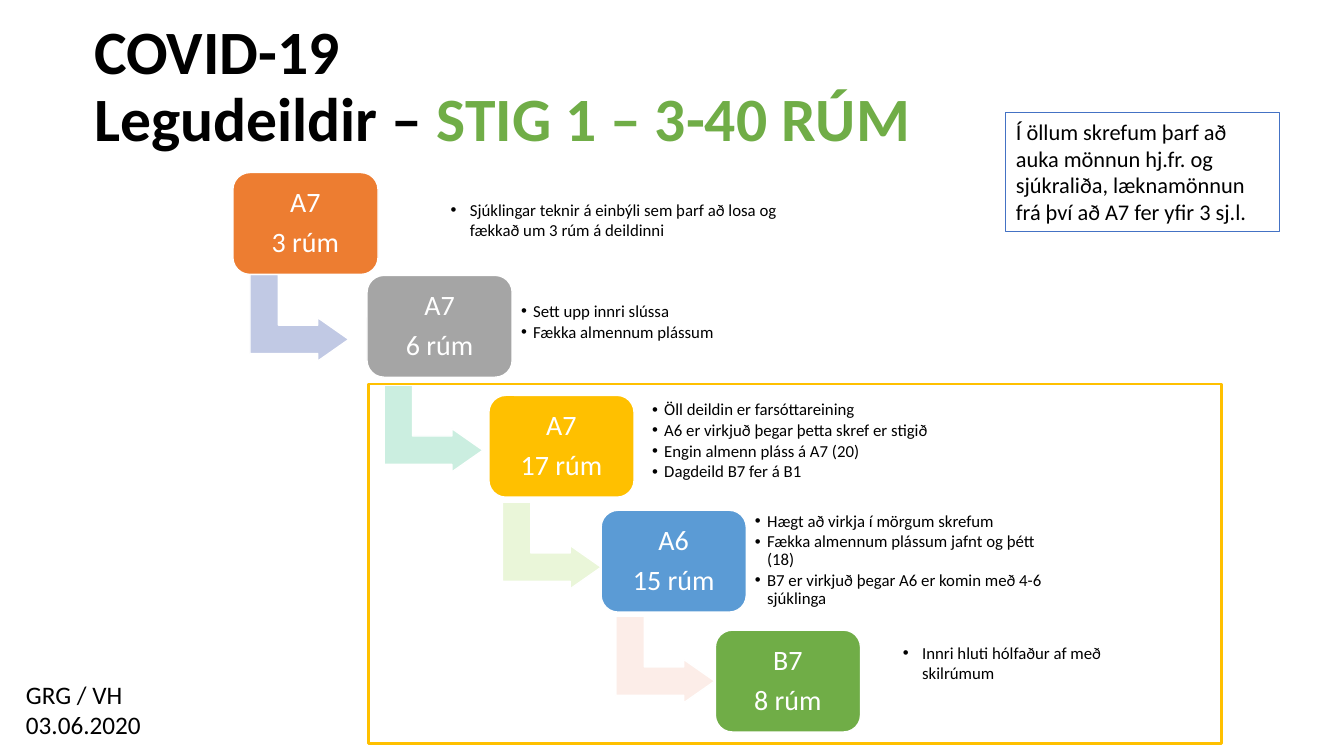
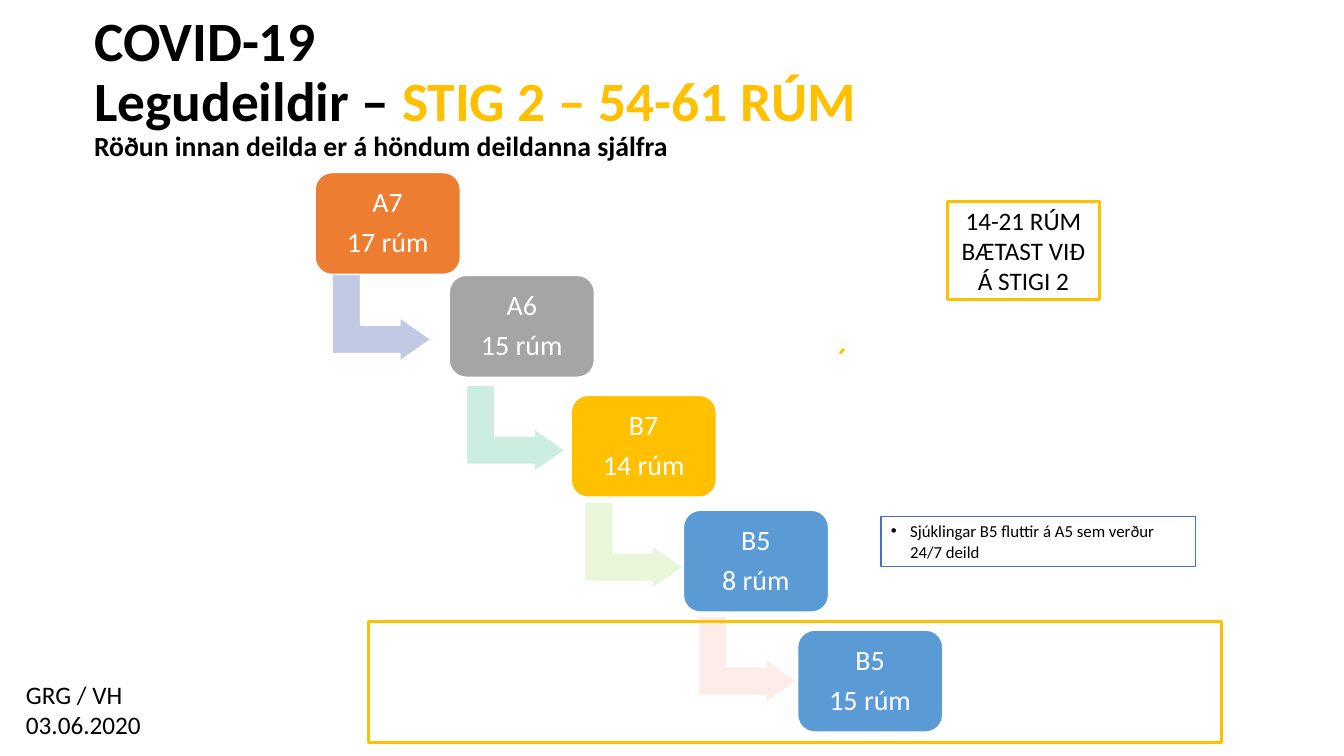
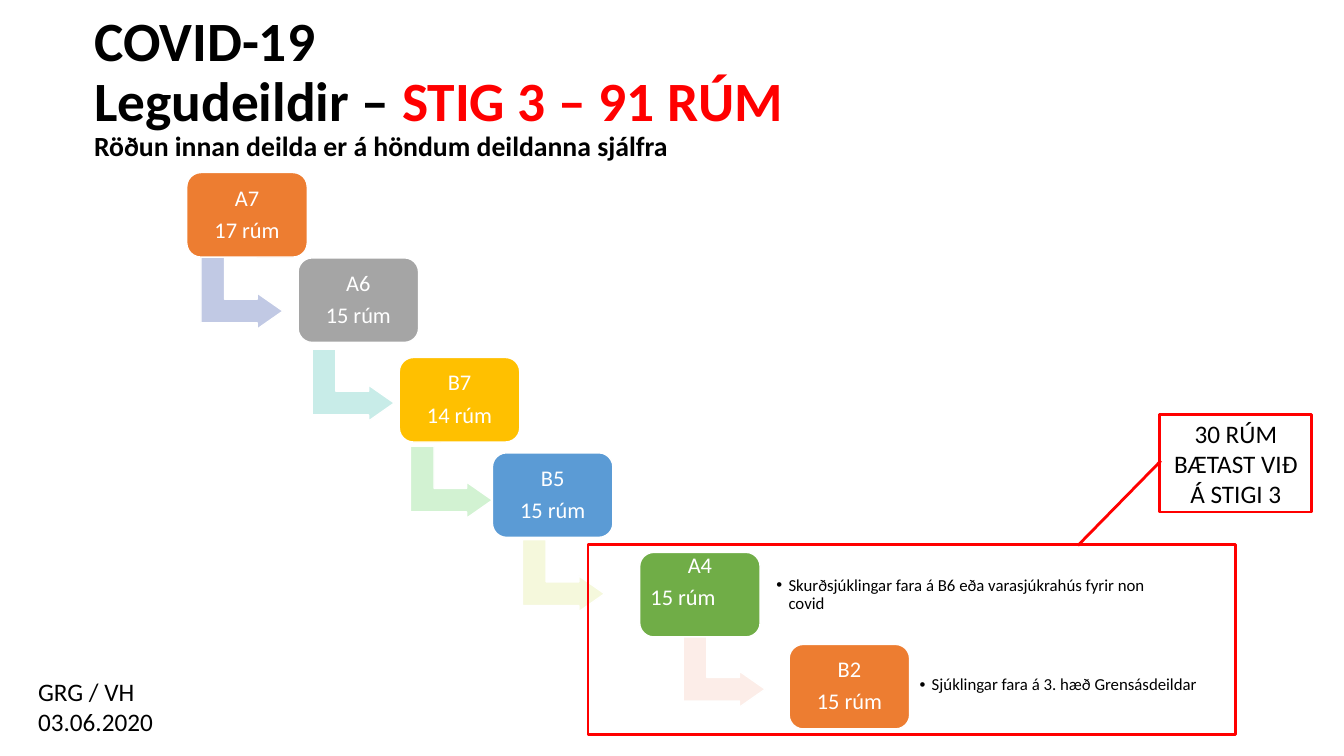
from lxml import etree
from pptx import Presentation
from pptx.dml.color import RGBColor
from pptx.enum.shapes import MSO_SHAPE
from pptx.enum.text import MSO_ANCHOR, MSO_AUTO_SIZE, PP_ALIGN
from pptx.oxml.ns import qn
from pptx.util import Inches, Pt

ROUNDED, ARROW = MSO_SHAPE.ROUNDED_RECTANGLE, MSO_SHAPE.BENT_UP_ARROW
RECTANGLE, CALLOUT = MSO_SHAPE.RECTANGLE, MSO_SHAPE.LINE_CALLOUT_1
LEFT, CENTER = PP_ALIGN.LEFT, PP_ALIGN.CENTER
MIDDLE, TOP = MSO_ANCHOR.MIDDLE, MSO_ANCHOR.TOP

FONT = "Calibri"
COLORS = {
    "black": "000000", "white": "FFFFFF", "orange": "ED7D31", "gray": "A5A5A5",
    "yellow": "FFC000", "blue": "5B9BD5", "green": "70AD47", "red": "FF0000",
    "border": "4472C4", "lilac": "C1C9E4", "mint": "CBEEE0", "lime": "EAF6D9",
    "rose": "FCEDE8", "aqua": "C8ECE8", "pale green": "D2F2D2", "cream": "F5F8DC",
}
PALETTE = {name: RGBColor.from_string(value) for name, value in COLORS.items()}

# All places and sizes are percentages of the slide's width and height
STAIR_TOP = 22.83
WARD_W, WARD_H = 10.8, 13.47
ARROW_W, ARROW_H = 6.45, 13.07
ARROW_ADJUSTMENTS = (0.328, 0.25, 0.358)

# Ward x, y from the start of the stair, then arrow x, y from its ward
STAIR = [
    (0, 0, 1.72, 12.67),
    (9.98, 13.6, 1.72, 13.73),
    (19.05, 29.47, 1.45, 13.33),
    (27.4, 44.67, 1.55, 13.2),
    (35.9, 60.53, 0, 0),
]
LONG_STAIR = STAIR[:3] + [
    (27.4, 44.67, 3.15, 13.05),
    (40.6, 60.53, 4.35, 12.4),
    (54, 75.2, 0, 0),
]
SHORT_ARROWS = ["lilac", "mint", "lime", "rose"]
LONG_ARROWS = ["lilac", "aqua", "pale green", "cream", "rose"]

# Note styles: text size, bullet indent, inset, anchor, border, spacing
NOTE_STYLES = {
    "step": (12, 0.12, 0.05, MIDDLE, None, (0.9, 1.8)),
    "loose": (12, 0.19, None, TOP, None, (1, 0)),
    "boxed": (12, 0.19, None, TOP, "border", (1, 0)),
    "remark": (16, 0, None, TOP, "border", (1, 0)),
}
SUBTITLE = "Röðun innan deilda er á höndum deildanna sjálfra"

STAGES = [
    {
        "stage": "STIG 1 – 3-40 RÚM", "accent": "green", "title_size": 44, "subtitle": None,
        "start": 17.33, "scale": 1, "ward_size": 20, "stair": STAIR, "arrows": SHORT_ARROWS,
        "wards": [("A7", "3 rúm", "orange"), ("A7", "6 rúm", "gray"), ("A7", "17 rúm", "yellow"),
                  ("A6", "15 rúm", "blue"), ("B7", "8 rúm", "green")],
        "notes": [
            ("step", (38.4, 37.2, 35.5, 10.93), ["Sett upp innri slússa", "Fækka almennum plássum"]),
            ("step", (48.15, 52.93, 34.1, 10.93),
             ["Öll deildin er farsóttareining", "A6 er virkjuð þegar þetta skref er stigið",
              "Engin almenn pláss á A7 (20)", "Dagdeild B7 fer á B1"]),
            ("step", (55.8, 68.67, 22.9, 10.93),
             ["Hægt að virkja í mörgum skrefum", "Fækka almennum plássum jafnt og þétt (18)",
              "B7 er virkjuð þegar A6 er komin með 4-6 sjúklinga"]),
            ("loose", (32.8, 25.73, 27.2, 6.67),
             ["Sjúklingar teknir á einbýli sem þarf að losa og fækkað um 3 rúm á deildinni"]),
            ("loose", (66.45, 84.4, 19.7, 6.67), ["Innri hluti hólfaður af með skilrúmum"]),
            ("remark", (74.85, 14.93, 20.35, 15.73),
             ["Í öllum skrefum þarf að auka mönnun hj.fr. og sjúkraliða, "
              "læknamönnun frá því að A7 fer yfir 3 sj.l."]),
        ],
        "frame": (27.4, 50.8, 63.5, 47.6), "frame_color": "yellow",
        "callout": None, "signature": (1.2, 89.2),
    },
    {
        "stage": "STIG 2 – 54-61 RÚM", "accent": "yellow", "title_size": 39.6, "subtitle": SUBTITLE,
        "start": 23.45, "scale": 1, "ward_size": 20, "stair": STAIR, "arrows": SHORT_ARROWS,
        "wards": [("A7", "17 rúm", "orange"), ("A6", "15 rúm", "gray"), ("B7", "14 rúm", "yellow"),
                  ("B5", "8 rúm", "blue"), ("B5", "15 rúm", "blue")],
        "notes": [("boxed", (65.55, 68.27, 23.4, 6.67),
                   ["Sjúklingar B5 fluttir á A5 sem verður 24/7 deild"])],
        "frame": (27.4, 82.27, 63.5, 16), "frame_color": "yellow",
        "callout": ("14-21 RÚM BÆTAST VIÐ Á STIGI 2", (70.5, 26.67), (1.506, -0.682, 1.553, -0.707)),
        "signature": (1.2, 89.2),
    },
    {
        "stage": "STIG 3 – 91 RÚM", "accent": "red", "title_size": 39.6, "subtitle": SUBTITLE,
        "start": 13.9, "scale": 0.83, "ward_size": 16, "stair": LONG_STAIR, "arrows": LONG_ARROWS,
        "wards": [("A7", "17 rúm", "orange"), ("A6", "15 rúm", "gray"), ("B7", "14 rúm", "yellow"),
                  ("B5", "15 rúm", "blue"), ("A4", "15 rúm", "green"), ("B2", "15 rúm", "orange")],
        "notes": [
            ("step", (57.4, 74.13, 29.5, 9.07),
             ["Skurðsjúklingar fara á B6 eða varasjúkrahús fyrir non covid"]),
            ("step", (68.05, 86.13, 25.9, 9.07), ["Sjúklingar fara á 3. hæð Grensásdeildar"]),
        ],
        "frame": (43.75, 72, 48.2, 25.2), "frame_color": "red",
        "callout": ("30 RÚM BÆTAST VIÐ Á STIGI 3", (86.3, 54.8), (0.476, 0.007, 1.343, -0.54)),
        "signature": (2.1, 88.8),
    },
]

deck = Presentation()
deck.slide_width, deck.slide_height = Inches(13.333), Inches(7.5)


def area(x, y, w, h):
    across, down = deck.slide_width / 100, deck.slide_height / 100
    return round(x * across), round(y * down), round(w * across), round(h * down)


def write(paragraph, text, size, color="black", bold=False):
    run = paragraph.add_run()
    run.text = text
    run.font.name, run.font.size, run.font.bold = FONT, Pt(size), bold
    run.font.color.rgb = PALETTE[color]


for stage in STAGES:
    slide = deck.slides.add_slide(deck.slide_layouts[5])
    shapes = slide.shapes

    # Title
    title = shapes.title
    title.left, title.top, title.width, title.height = area(6.25, 2, 86.25, 19.33)
    title.text_frame.auto_size = MSO_AUTO_SIZE.NONE
    title.text_frame.vertical_anchor = MIDDLE
    heading = title.text_frame.paragraphs[0]
    heading.alignment, heading.line_spacing = LEFT, 0.9
    write(heading, "COVID-19", stage["title_size"], bold=True)
    heading.add_line_break()
    write(heading, "Legudeildir – ", stage["title_size"], bold=True)
    write(heading, stage["stage"], stage["title_size"], stage["accent"], True)
    if stage["subtitle"]:
        heading.add_line_break()
        write(heading, stage["subtitle"], stage["title_size"] / 2, bold=True)

    # Stair of wards, each but the last with an arrow to the next
    scale = stage["scale"]
    arrows = stage["arrows"] + [None]
    for (dx, dy, arrow_dx, arrow_dy), (ward_name, beds, color), arrow_color in zip(
            stage["stair"], stage["wards"], arrows):
        x, y = stage["start"] + scale * dx, STAIR_TOP + scale * dy
        pieces = [(ROUNDED, (x, y, scale * WARD_W, scale * WARD_H), color)]
        if arrow_color:
            arrow_area = (x + scale * arrow_dx, y + scale * arrow_dy, scale * ARROW_W, scale * ARROW_H)
            pieces.insert(0, (ARROW, arrow_area, arrow_color))
        for kind, place, fill in pieces:
            piece = shapes.add_shape(kind, *area(*place))
            piece.shadow.inherit = False
            piece.fill.solid()
            piece.fill.fore_color.rgb = PALETTE[fill]
            piece.line.color.rgb, piece.line.width = PALETTE["white"], Pt(1)
            if kind == ARROW:
                piece.rotation = 90
                for index, value in enumerate(ARROW_ADJUSTMENTS):
                    piece.adjustments[index] = value
        label = piece.text_frame
        label.word_wrap, label.vertical_anchor = True, MIDDLE
        label.margin_left = label.margin_right = Inches(0.08 * scale)
        label.margin_top = label.margin_bottom = Inches(0.08 * scale)
        for line, text in enumerate((ward_name, beds)):
            paragraph = label.add_paragraph() if line else label.paragraphs[0]
            paragraph.alignment, paragraph.line_spacing = CENTER, 0.9
            paragraph.space_after = Pt(0.35 * stage["ward_size"])
            write(paragraph, text, stage["ward_size"], "white")
        if ward_name == "A4":
            paragraph.alignment = LEFT
            label.margin_bottom = Inches(0.31)

    # Notes
    for style, place, lines in stage["notes"]:
        size, indent, inset, anchor, border, (line_spacing, after) = NOTE_STYLES[style]
        note = shapes.add_textbox(*area(*place))
        if border:
            note.line.color.rgb, note.line.width = PALETTE[border], Pt(0.75)
        body = note.text_frame
        body.word_wrap, body.vertical_anchor = True, anchor
        if inset:
            body.margin_left = body.margin_right = Inches(inset)
            body.margin_top = body.margin_bottom = Inches(inset)
        for line, text in enumerate(lines):
            paragraph = body.add_paragraph() if line else body.paragraphs[0]
            paragraph.line_spacing, paragraph.space_after = line_spacing, Pt(after)
            write(paragraph, text, size)
            if indent:
                properties = paragraph._p.get_or_add_pPr()
                properties.set("marL", str(Inches(indent)))
                properties.set("indent", str(-Inches(indent)))
                etree.SubElement(properties, qn("a:buFont")).set("typeface", "Arial")
                etree.SubElement(properties, qn("a:buChar")).set("char", "•")

    # Frame around the added wards, and its callout
    outlines = [(RECTANGLE, stage["frame"], "", ())]
    if stage["callout"]:
        message, corner, pointer = stage["callout"]
        outlines.append((CALLOUT, (*corner, 11.3, 12.93), message, pointer))
    for kind, place, message, pointer in outlines:
        outline = shapes.add_shape(kind, *area(*place))
        outline.shadow.inherit = False
        outline.fill.background()
        outline.line.color.rgb, outline.line.width = PALETTE[stage["frame_color"]], Pt(2)
        for index, value in enumerate(pointer):
            outline.adjustments[index] = value
        if message:
            outline.text_frame.word_wrap = True
            outline.text_frame.vertical_anchor = MIDDLE
            outline.text_frame.paragraphs[0].alignment = CENTER
            write(outline.text_frame.paragraphs[0], message, 18)

    # Signature and date
    signature = shapes.add_textbox(*area(*stage["signature"], 20.5, 9.47)).text_frame
    signature.word_wrap = True
    write(signature.paragraphs[0], "GRG / VH", 18)
    write(signature.add_paragraph(), "03.06.2020", 18)

deck.save("out.pptx")
